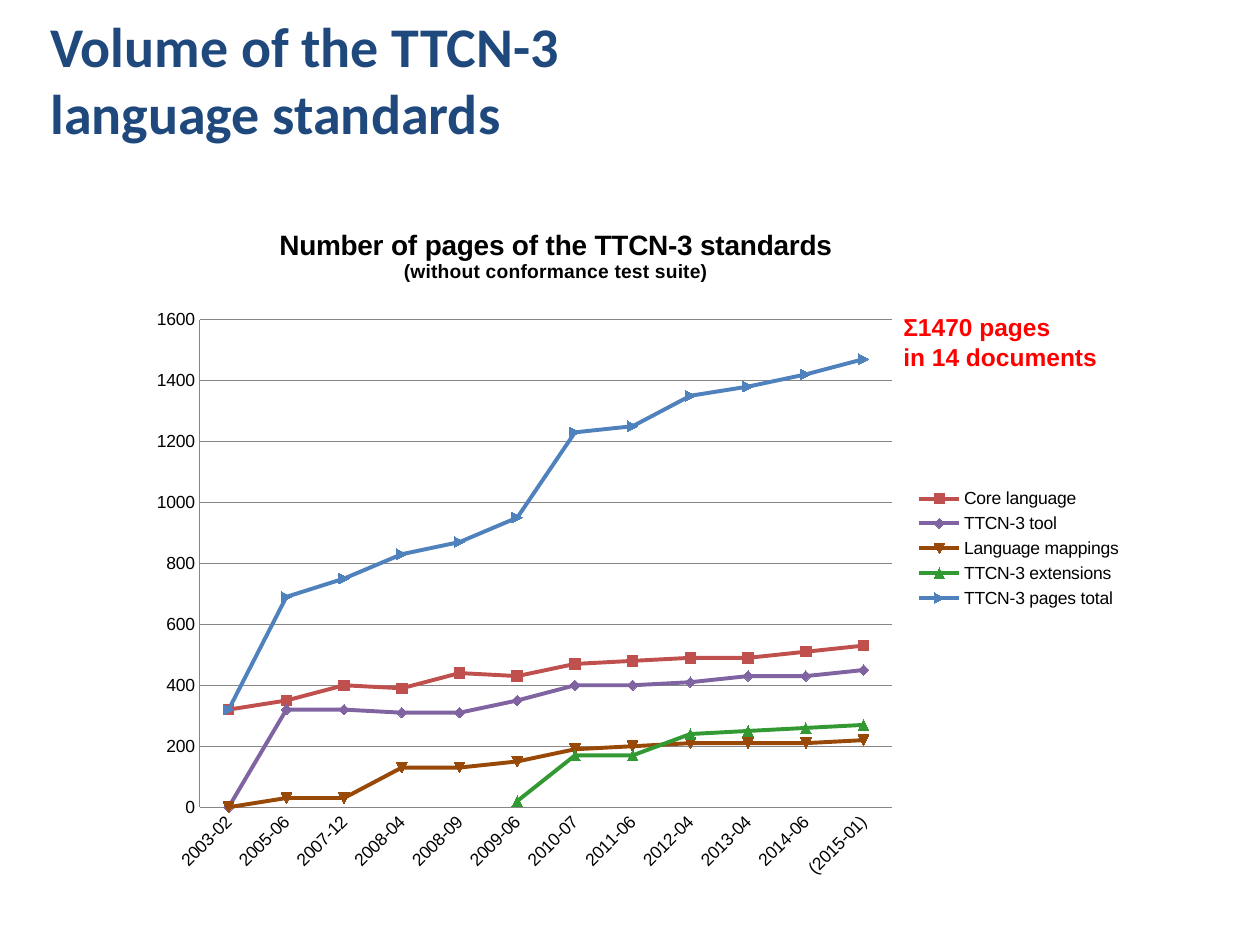
from lxml import etree
from pptx import Presentation
from pptx.chart.data import CategoryChartData
from pptx.dml.color import RGBColor
from pptx.enum import chart as charts, text
from pptx.oxml.ns import qn
from pptx.util import Cm, Pt

RELEASES = ["2003-02", "2005-06", "2007-12", "2008-04", "2008-09", "2009-06",
            "2010-07", "2011-06", "2012-04", "2013-04", "2014-06", "(2015-01)"]
PAGES = [
    ("Core language", "C0504D",
     [320, 350, 400, 390, 440, 430, 470, 480, 490, 490, 510, 530]),
    ("TTCN-3 tool", "8064A2",
     [0, 320, 320, 310, 310, 350, 400, 400, 410, 430, 430, 450]),
    ("Language mappings", "984807",
     [0, 30, 30, 130, 130, 150, 190, 200, 210, 210, 210, 220]),
    ("TTCN-3 extensions", "339933",
     [None] * 5 + [20, 170, 170, 240, 250, 260, 270]),
    ("TTCN-3 pages total", "4F81BD",
     [320, 690, 750, 830, 870, 950, 1230, 1250, 1350, 1380, 1420, 1470]),
]
GREY = "868686"


def rgb(value):
    return RGBColor.from_string(value)


def set_font(font, name, size, color, bold):
    font.name, font.size, font.bold = name, Pt(size), bold
    font.color.rgb = rgb(color)


def set_layout(part, inner=False, **fractions):
    """Place a chart part by fractions (x, y, w, h) of the chart box."""
    for old in part.findall(qn("c:layout")):
        part.remove(old)
    layout = etree.Element(qn("c:layout"))
    manual = etree.SubElement(layout, qn("c:manualLayout"))
    settings = [("layoutTarget", "inner")] if inner else []
    settings += [("xMode", "edge"), ("yMode", "edge"), *fractions.items()]
    for tag, value in settings:
        etree.SubElement(manual, qn(f"c:{tag}")).set("val", str(value))
    overlay = part.find(qn("c:overlay"))
    if overlay is None:
        part.insert(0, layout)
    else:
        overlay.addprevious(layout)


def add_heading(slide, left, top, width, height):
    heading = slide.shapes.title
    heading.left, heading.top, heading.width, heading.height = left, top, width, height
    frame = heading.text_frame
    frame.text = "Volume of the TTCN-3\vlanguage standards"
    frame.vertical_anchor = text.MSO_ANCHOR.MIDDLE
    frame.auto_size = text.MSO_AUTO_SIZE.NONE
    paragraph = frame.paragraphs[0]
    paragraph.alignment = text.PP_ALIGN.LEFT
    set_font(paragraph.font, "Calibri", 32, "1F497D", True)


def format_chart_title(chart):
    chart.has_title = True
    frame = chart.chart_title.text_frame
    frame.text = "Number of pages of the TTCN-3 standards\n(without conformance test suite)"
    for paragraph, size in zip(frame.paragraphs, (16, 11)):
        set_font(paragraph.font, "Arial", size, "000000", True)
    set_layout(chart._chartSpace.chart.find(qn("c:title")), x=0.14, y=0.02)


def format_axes(chart):
    releases, pages = chart.category_axis, chart.value_axis
    for axis in (releases, pages):
        axis.major_tick_mark = axis.minor_tick_mark = charts.XL_TICK_MARK.NONE
        axis.format.line.color.rgb = rgb(GREY)
        axis.format.line.width = Pt(0.75)
        set_font(axis.tick_labels.font, "Arial", 10, "000000", False)
    releases.has_major_gridlines = False
    releases._element.find(qn("c:txPr")).find(qn("a:bodyPr")).set("rot", "-2700000")
    pages.minimum_scale, pages.maximum_scale, pages.major_unit = 0, 1600, 200
    pages.has_major_gridlines = True
    pages.major_gridlines.format.line.color.rgb = rgb(GREY)
    pages.major_gridlines.format.line.width = Pt(0.75)


def add_pages_chart(slide, left, top, width, height):
    data = CategoryChartData(number_format="General")
    data.categories = RELEASES
    for name, _, counts in PAGES:
        data.add_series(name, counts)
    chart = slide.shapes.add_chart(charts.XL_CHART_TYPE.LINE_MARKERS,
                                   left, top, width, height, data).chart
    set_font(chart.font, "Arial", 10, "000000", False)
    format_chart_title(chart)
    format_axes(chart)
    chart.plots[0].vary_by_categories = False
    for series, (_, color, _) in zip(chart.plots[0].series, PAGES):
        series.smooth = False
        series.format.line.color.rgb = rgb(color)
        series.format.line.width = Pt(2.25)
        series.marker.style = charts.XL_MARKER_STYLE.AUTOMATIC
        series.marker.size = 6
        series.marker.format.fill.solid()
        series.marker.format.fill.fore_color.rgb = rgb(color)
        series.marker.format.line.color.rgb = rgb(color)
    chart.has_legend = True
    chart.legend.position = charts.XL_LEGEND_POSITION.RIGHT
    chart.legend.include_in_layout = False
    set_font(chart.legend.font, "Arial", 10, "000000", False)
    set_layout(chart.legend._element, x=0.78, y=0.4, w=0.21, h=0.19)
    set_layout(chart._chartSpace.chart.plotArea, inner=True,
               x=0.064, y=0.16, w=0.694, h=0.714)


def add_total_note(slide, left, top, width, height):
    frame = slide.shapes.add_textbox(left, top, width, height).text_frame
    frame.word_wrap = False
    frame.auto_size = text.MSO_AUTO_SIZE.SHAPE_TO_FIT_TEXT
    frame.text = "Σ1470 pages\vin 14 documents"
    set_font(frame.paragraphs[0].font, "Arial", 14, "FF0000", True)


def main():
    deck = Presentation()
    deck.slide_width, deck.slide_height = Cm(25.4), Cm(19.05)
    slide = deck.slides.add_slide(deck.slide_layouts[5])
    add_heading(slide, Cm(0.76), Cm(0), Cm(22.86), Cm(3.18))
    add_pages_chart(slide, Cm(2.74), Cm(4.24), Cm(20.12), Cm(13.77))
    add_total_note(slide, Cm(17.96), Cm(6.17), Cm(4.42), Cm(1.45))
    deck.save("out.pptx")


if __name__ == "__main__":
    main()
